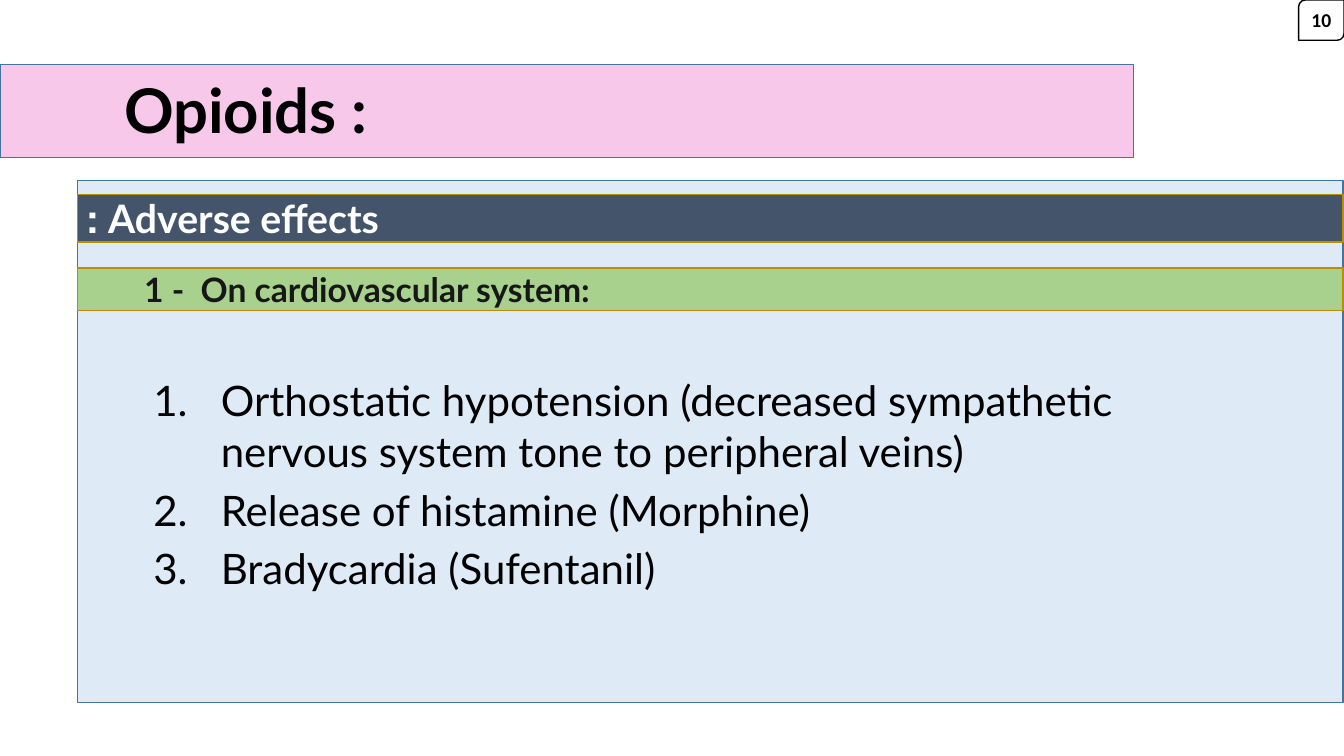
from dataclasses import dataclass

from lxml.etree import SubElement
from pptx import Presentation
from pptx.dml.color import RGBColor as Rgb
from pptx.enum.shapes import MSO_SHAPE as Kind
from pptx.enum.text import MSO_ANCHOR as Anchor, MSO_AUTO_SIZE as Fit, PP_ALIGN as Align
from pptx.oxml.ns import qn
from pptx.util import Inches, Pt

HUE = {
    "white": "FFFFFF", "black": "000000", "ink": "181717", "navy": "44546A",
    "pale": "DEEBF7", "pink": "F8C8EB", "green": "A9D18E",
    "blue": "43739E", "gold": "BD8E00",
}
LEFT, WIDE = 0.77, 12.55  # shared by the panel and both bars
HANG = 0.67


@dataclass
class Box:
    at: tuple[float, float, float, float]
    fill: str
    line: str
    text: str = ""
    size: int = 0
    ink: str = "black"
    font: str = "Lato"
    kind: Kind = Kind.RECTANGLE
    align: Align = Align.LEFT
    inset: float = 0.1
    rtl: bool = False


BACK = [
    Box((LEFT, 1.79, WIDE, 5.18), "pale", "blue"),
    Box((0, 0.64, 11.24, 0.92), "pink", "blue"),
]
FRONT = [
    Box((12.88, 0, 0.45, 0.4), "white", "black", "10", 14, font="Calibri",
        kind=Kind.ROUND_2_DIAG_RECTANGLE, align=Align.CENTER),
    Box((LEFT, 1.93, WIDE, 0.47), "navy", "gold", "Adverse effects :", 28,
        "white", rtl=True),
    Box((LEFT, 2.66, WIDE, 0.42), "green", "gold",
        "1 -  On cardiovascular system:", 24, "ink", inset=0.66),
]
ITEMS = [
    "Orthostatic hypotension (decreased sympathetic nervous system tone to peripheral veins)",
    "Release of histamine (Morphine)",
    "Bradycardia (Sufentanil)",
]


def tint(name: str) -> Rgb:
    return Rgb.from_string(HUE[name])


def write(para, text: str, size: int, ink: str = "black",
          font: str = "Lato", bold: bool = True) -> None:
    run = para.add_run()
    run.text = text
    run.font.name, run.font.size, run.font.bold = font, Pt(size), bold
    run.font.color.rgb = tint(ink)


def draw(slide, box: Box) -> None:
    shape = slide.shapes.add_shape(box.kind, *map(Inches, box.at))
    shape.shadow.inherit = False
    shape.fill.solid()
    shape.fill.fore_color.rgb = tint(box.fill)
    shape.line.color.rgb = tint(box.line)
    shape.line.width = Pt(1)
    if box.text:
        frame = shape.text_frame
        frame.word_wrap = True
        frame.vertical_anchor = Anchor.MIDDLE
        frame.margin_left = Inches(box.inset)
        para = frame.paragraphs[0]
        para.alignment = box.align
        if box.rtl:
            para._p.get_or_add_pPr().set("rtl", "1")
        write(para, box.text, box.size, box.ink, box.font)


def place(holder, at: tuple[float, float, float, float], anchor: Anchor):
    """Move a placeholder to its spot and in front of what is drawn so far."""
    holder.left, holder.top, holder.width, holder.height = map(Inches, at)
    holder.element.getparent().append(holder.element)
    frame = holder.text_frame
    frame.word_wrap = True
    frame.auto_size = Fit.NONE
    frame.vertical_anchor = anchor
    return frame


def number(para) -> None:
    props = para._p.get_or_add_pPr()
    props.set("marL", str(Inches(HANG)))
    props.set("indent", str(-Inches(HANG)))
    SubElement(props, qn("a:buFont"), typeface="+mj-lt")
    SubElement(props, qn("a:buAutoNum"), type="arabicPeriod")


def main() -> None:
    deck = Presentation()
    deck.slide_width, deck.slide_height = Inches(13.33), Inches(7.5)
    slide = deck.slides.add_slide(deck.slide_layouts[1])

    # Panel and title band
    for box in BACK:
        draw(slide, box)

    # Title
    frame = place(slide.shapes.title, (0.41, 0.4, 11.5, 1.45), Anchor.MIDDLE)
    frame.margin_left = Inches(0.82)
    head = frame.paragraphs[0]
    head.alignment = Align.LEFT
    head.line_spacing = 0.9
    write(head, "Opioids :", 44)

    # Numbered list
    frame = place(slide.placeholders[1], (1.42, 3.67, 10.68, 3), Anchor.TOP)
    for i, item in enumerate(ITEMS):
        para = frame.add_paragraph() if i else frame.paragraphs[0]
        number(para)
        para.space_before = Pt(6 if i else 0)
        write(para, item, 30, bold=False)

    # Page tag and heading bars
    for box in FRONT:
        draw(slide, box)

    deck.save("out.pptx")


if __name__ == "__main__":
    main()
